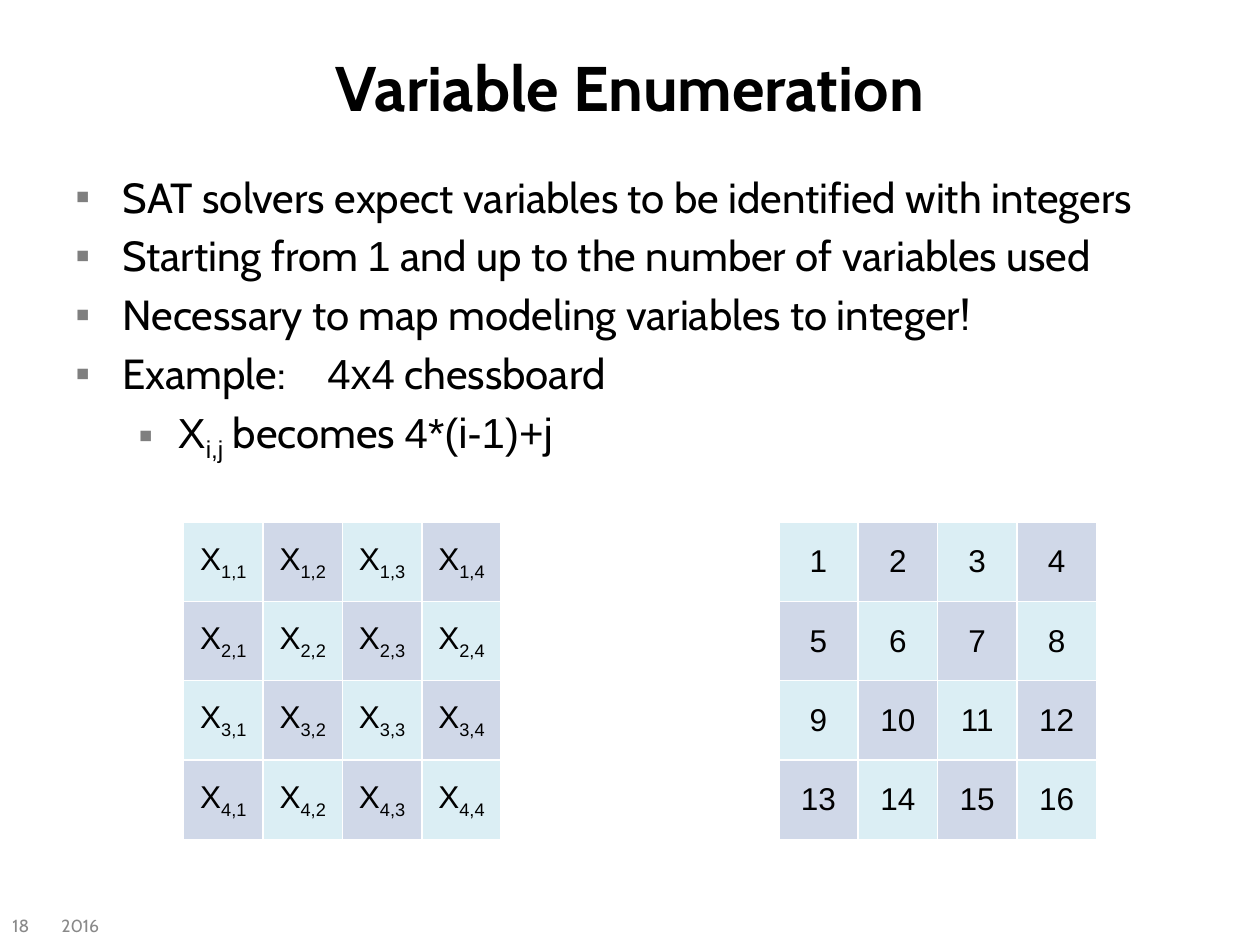
from pptx import Presentation
from pptx.dml.color import RGBColor
from pptx.enum.text import MSO_ANCHOR, PP_ALIGN
from pptx.oxml import parse_xml
from pptx.oxml.ns import nsdecls
from pptx.util import Pt


def color(value):
    return RGBColor.from_string(value)


def add_runs(p, parts, size, fill, bold=False):
    for text, font, baseline in parts:
        r = p.add_run()
        r.text = text
        r.font.name = font
        r.font.size = Pt(size)
        r.font.bold = bold
        r.font.color.rgb = color(fill)
        if baseline:
            r.font._element.set("baseline", str(baseline))


prs = Presentation()
prs.slide_width, prs.slide_height = Pt(720), Pt(540)
s = prs.slides.add_slide(prs.slide_layouts[6])

labels = [
    ("Variable Enumeration", 36, 21.6, 648, 55.4, 36, "000000", True, PP_ALIGN.CENTER),
    ("2016", 28, 517.5, 68, 22.5, 10, "898989", False, PP_ALIGN.LEFT),
    ("18", 0, 517.5, 34, 22.5, 10, "898989", False, PP_ALIGN.LEFT),
]
for text, x, y, w, h, size, fill, bold, align in labels:
    tf = s.shapes.add_textbox(Pt(x), Pt(y), Pt(w), Pt(h)).text_frame
    tf.word_wrap = True
    tf.vertical_anchor = MSO_ANCHOR.MIDDLE
    p = tf.paragraphs[0]
    p.alignment = align
    add_runs(p, [(text, "Cabin", 0)], size, fill, bold)

bullets = [
    (0, [("SAT solvers expect variables to be identified with integers", "Cabin", 0)]),
    (0, [("Starting from ", "Cabin", 0), ("1", "Arial", 0),
         (" and up to the number of variables used", "Cabin", 0)]),
    (0, [("Necessary to map modeling variables to integer!", "Cabin", 0)]),
    (0, [("Example:\t", "Cabin", 0), ("4x4", "Arial", 0), (" chessboard", "Cabin", 0)]),
    (1, [("X", "Arial", 0), ("i,j", "Arial", -25000), (" becomes ", "Cabin", 0),
         ("4*(i-1)+j", "Arial", 0)]),
]
indents = [(27, -27), (58.5, -22.5)]
tf = s.shapes.add_textbox(Pt(36), Pt(94.3), Pt(648), Pt(388)).text_frame
tf.word_wrap = True
for i, (level, parts) in enumerate(bullets):
    p = tf.add_paragraph() if i else tf.paragraphs[0]
    p.level = level
    if i:
        p.space_before = Pt(4.8)
    pPr = p._p.get_or_add_pPr()
    for name, value in zip(("marL", "indent"), indents[level]):
        pPr.set(name, str(Pt(value)))
    for xml in (
        f'<a:buClr {nsdecls("a")}><a:srgbClr val="7F7F7F"/></a:buClr>',
        f'<a:buFont {nsdecls("a")} typeface="Arial"/>',
        f'<a:buChar {nsdecls("a")} char="▪"/>',
    ):
        pPr.append(parse_xml(xml))
    add_runs(p, parts, 24, "000000")

n, side = 4, 45.36
for x, indexed in ((445, False), (105, True)):
    board = s.shapes.add_table(n, n, Pt(x), Pt(298.3), Pt(n * side), Pt(n * side)).table
    board.first_row = board.horz_banding = False
    for k in range(n):
        board.columns[k].width = board.rows[k].height = Pt(side)
    for k in range(n * n):
        row, col = divmod(k, n)
        cell = board.cell(row, col)
        cell.vertical_anchor = MSO_ANCHOR.MIDDLE
        tcPr = cell._tc.get_or_add_tcPr()
        for edge in "LRTB":
            tcPr.append(parse_xml(
                f'<a:ln{edge} {nsdecls("a")} w="12700"><a:solidFill>'
                f'<a:srgbClr val="FFFFFF"/></a:solidFill></a:ln{edge}>'))
        cell.fill.solid()
        cell.fill.fore_color.rgb = color("D0D8E8" if (row + col) % 2 else "DBEEF4")
        p = cell.text_frame.paragraphs[0]
        p.alignment = PP_ALIGN.CENTER
        if indexed:
            parts = [("X", "Arial", 0), (f"{row + 1},{col + 1}", "Arial", -25000)]
        else:
            parts = [(str(k + 1), "Arial", 0)]
        add_runs(p, parts, 18, "000000")

prs.save("out.pptx")
